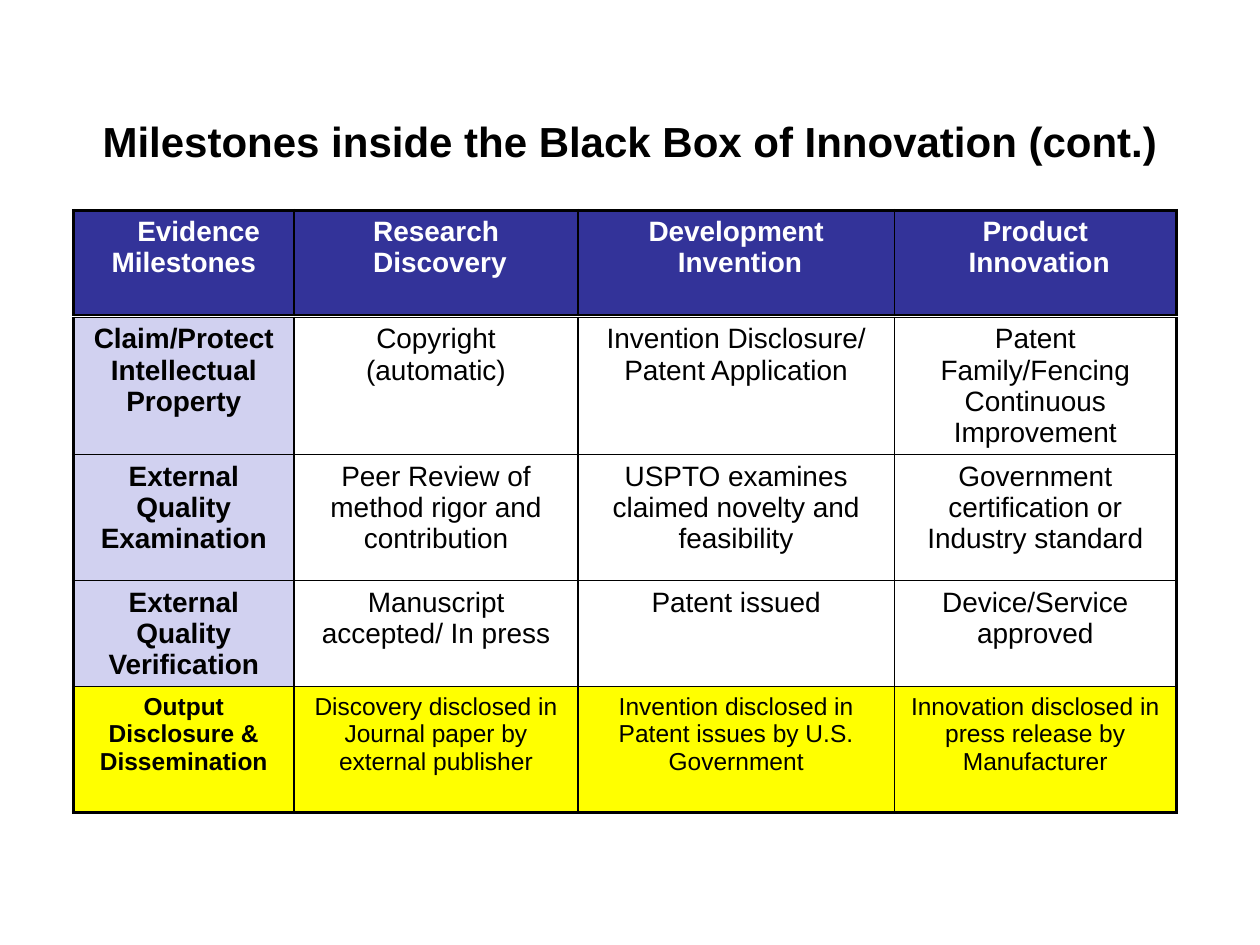
"""Build a slide with the evidence milestones table of innovation."""
from dataclasses import dataclass

from lxml import etree
from pptx import Presentation
from pptx.dml.color import RGBColor
from pptx.enum.text import MSO_ANCHOR, MSO_AUTO_SIZE, PP_ALIGN
from pptx.oxml.ns import qn
from pptx.util import Cm, Pt

CENTER = PP_ALIGN.CENTER
MIDDLE = MSO_ANCHOR.MIDDLE
NO_AUTOFIT = MSO_AUTO_SIZE.NONE
FONT = "Arial"
BLACK, WHITE, NAVY, LAVENDER, YELLOW = "000000", "FFFFFF", "333399", "D1D1F0", "FFFF00"
LEFT = 1.48
COLUMN_WIDTHS = (4.45, 5.72, 6.38, 5.68)
THIN, THICK = 1, 2
FIRST_LINE_INDENT = 0.6


@dataclass(frozen=True)
class Row:
    height: float
    texts: tuple[str, ...]
    label_fill: str = LAVENDER
    fill: str = WHITE
    color: str = BLACK
    size: int = 16
    all_bold: bool = False


HEADER = [
    Row(2.11, ("Evidence Milestones", "Research\n Discovery",
               "Development\v Invention", "Product\n Innovation"),
        NAVY, NAVY, WHITE, all_bold=True),
]
BODY = [
    Row(2.75, ("Claim/Protect Intellectual Property", "Copyright (automatic)",
               "Invention Disclosure/ Patent Application",
               "Patent Family/Fencing Continuous Improvement")),
    Row(2.54, ("External Quality Examination",
               "Peer Review of method rigor and contribution",
               "USPTO examines claimed novelty and feasibility",
               "Government certification or Industry standard")),
    Row(1.7, ("External Quality Verification", "Manuscript accepted/ In press",
              "Patent issued", "Device/Service approved")),
    Row(2.54, ("Output Disclosure & Dissemination",
               "Discovery disclosed in Journal paper by external publisher",
               "Invention disclosed in Patent issues by U.S. Government",
               "Innovation disclosed in press release by Manufacturer"),
        YELLOW, YELLOW, size=14),
]


def rgb(value: str) -> RGBColor:
    return RGBColor.from_string(value)


def format_text(frame, size: int, color: str, bold: bool) -> None:
    for paragraph in frame.paragraphs:
        paragraph.alignment = CENTER
        font = paragraph.font
        font.name, font.size, font.bold = FONT, Pt(size), bold
        font.color.rgb = rgb(color)


def set_borders(cell, widths: dict[str, int]) -> None:
    properties = cell._tc.get_or_add_tcPr()
    for side in ("L", "R", "T", "B"):
        line = etree.SubElement(properties, qn(f"a:ln{side}"), w=str(Pt(widths[side])))
        fill = etree.SubElement(line, qn("a:solidFill"))
        etree.SubElement(fill, qn("a:srgbClr"), val=BLACK)


def add_grid(page, top: float, rows: list[Row], top_line: int, bottom_line: int):
    shape = page.shapes.add_table(
        len(rows), len(COLUMN_WIDTHS), Cm(LEFT), Cm(top),
        Cm(sum(COLUMN_WIDTHS)), Cm(sum(row.height for row in rows)))
    table = shape.table
    table.first_row = table.horz_banding = False
    for column, width in zip(table.columns, COLUMN_WIDTHS):
        column.width = Cm(width)
    last_row, last_column = len(rows) - 1, len(COLUMN_WIDTHS) - 1
    for i, row in enumerate(rows):
        table.rows[i].height = Cm(row.height)
        for j, text in enumerate(row.texts):
            cell = table.cell(i, j)
            cell.text_frame.text = text
            format_text(cell.text_frame, row.size, row.color, row.all_bold or j == 0)
            set_borders(cell, {
                "L": THICK if j == 0 else THIN,
                "R": THICK if j == last_column else THIN,
                "T": top_line if i == 0 else THIN,
                "B": bottom_line if i == last_row else THIN,
            })
            cell.fill.solid()
            cell.fill.fore_color.rgb = rgb(row.label_fill if j == 0 else row.fill)
    return table


def add_title(page, text: str) -> None:
    title = page.shapes.title
    title.left, title.top, title.width, title.height = Cm(1.27), Cm(2.11), Cm(22.86), Cm(3.18)
    frame = title.text_frame
    frame.text = text
    frame.word_wrap = True
    frame.auto_size = NO_AUTOFIT
    frame.vertical_anchor = MIDDLE
    frame.margin_bottom = Cm(1.85)
    format_text(frame, 24, BLACK, True)


def main() -> None:
    deck = Presentation()
    deck.slide_width, deck.slide_height = Cm(25.4), Cm(19.05)
    page = deck.slides.add_slide(deck.slide_layouts[5])
    add_title(page, "Milestones inside the Black Box of Innovation (cont.)")
    header = add_grid(page, 4.24, HEADER, THICK, THIN)
    first_paragraph = header.cell(0, 0).text_frame.paragraphs[0]
    first_paragraph._p.get_or_add_pPr().set("indent", str(Cm(FIRST_LINE_INDENT)))
    add_grid(page, 6.4, BODY, THIN, THICK)
    deck.save("out.pptx")


if __name__ == "__main__":
    main()
